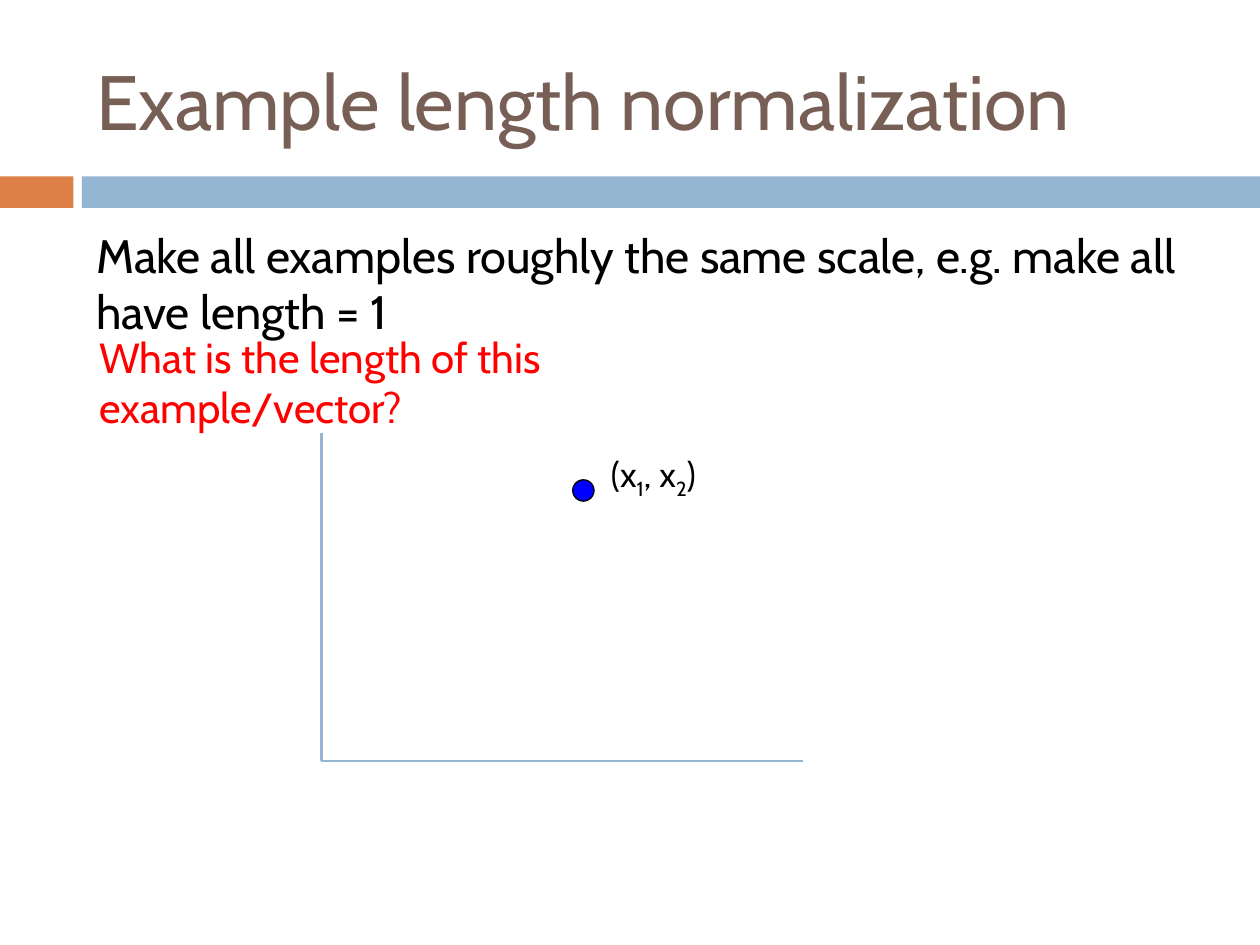
from dataclasses import dataclass

from lxml.etree import SubElement
from pptx import Presentation
from pptx.dml.color import RGBColor
from pptx.enum.shapes import MSO_CONNECTOR as Connector, MSO_SHAPE as Shape
from pptx.enum.text import MSO_ANCHOR as Anchor
from pptx.oxml.ns import qn
from pptx.util import Pt


@dataclass(frozen=True)
class Theme:
    font: str = "Cabin"
    title_color: str = "775F55"
    text_color: str = "000000"
    question_color: str = "FF0000"
    accent: str = "DD8047"
    band: str = "94B6D2"
    point: str = "0000FF"
    title_size: float = 44
    body_size: float = 26.8
    question_size: float = 24
    label_size: float = 20


THEME = Theme()


def color(value):
    return RGBColor.from_string(value)


def add_text(slide, box, runs, size, text_color, anchor=Anchor.TOP, wrap=True):
    shape = slide.shapes.add_textbox(*map(Pt, box))
    frame = shape.text_frame
    frame.word_wrap = wrap
    frame.vertical_anchor = anchor
    paragraph = frame.paragraphs[0]
    paragraph.font.name = THEME.font
    paragraph.font.size = Pt(size)
    paragraph.font.color.rgb = color(text_color)
    for text, baseline in runs:
        run = paragraph.add_run()
        run.text = text
        if baseline:
            run.font._element.set("baseline", str(baseline * 1000))
    return paragraph


def add_filled(slide, kind, box, fill, line=None):
    shape = slide.shapes.add_shape(kind, *map(Pt, box))
    shape.shadow.inherit = False
    shape.fill.solid()
    shape.fill.fore_color.rgb = color(fill)
    if line:
        shape.line.color.rgb = color(line)
        shape.line.width = Pt(0.75)
    else:
        shape.line.fill.background()


def add_axis(slide, start, end):
    axis = slide.shapes.add_connector(Connector.STRAIGHT, *map(Pt, start + end))
    axis.line.color.rgb = color(THEME.band)
    axis.line.width = Pt(1.5)
    SubElement(axis._element.spPr, qn("a:effectLst"))


def add_header_band(slide, box):
    left, top, width, height = box
    accent_width, gap = 42, 4.8
    band_left = left + accent_width + gap
    add_filled(slide, Shape.RECTANGLE, (left, top, accent_width, height), THEME.accent)
    add_filled(slide, Shape.RECTANGLE,
               (band_left, top, left + width - band_left, height), THEME.band)


def add_heading(slide, box):
    add_text(slide, box, [("Example length normalization", 0)],
             THEME.title_size, THEME.title_color, Anchor.MIDDLE)


def add_body(slide, box):
    left, top, width, height = box
    paragraph = add_text(
        slide, (left, top, width, 62),
        [("Make all examples roughly the same scale, e.g. make all have length = 1", 0)],
        THEME.body_size, THEME.text_color)
    paragraph.space_before = Pt(7)
    add_text(slide, (left + 1.5, top + 59.8, 425.5, height - 59.8),
             [("What is the length of this example/vector?", 0)],
             THEME.question_size, THEME.question_color)


def add_plot(slide, box):
    left, top, width, height = box
    origin = (left, top + height)
    add_axis(slide, (left, top), origin)
    add_axis(slide, origin, (left + width, top + height))
    add_filled(slide, Shape.OVAL, (left + 143.7, top + 26.5, 12.2, 12.2),
               THEME.point, THEME.text_color)
    add_text(slide, (left + 158.4, top + 7.2, 70.5, 31.5),
             [("(x", 0), ("1", -25), (", x", 0), ("2", -25), (")", 0)],
             THEME.label_size, THEME.text_color, wrap=False)


def main():
    presentation = Presentation()
    presentation.slide_width = Pt(720)
    presentation.slide_height = Pt(540)
    slide = presentation.slides.add_slide(presentation.slide_layouts[6])
    add_header_band(slide, (0, 100.8, 720, 18))
    add_heading(slide, (48, 18, 642, 78))
    add_body(slide, (48, 126, 642, 95.8))
    add_plot(slide, (183.6, 247.7, 275, 187.2))
    presentation.save("out.pptx")


if __name__ == "__main__":
    main()
